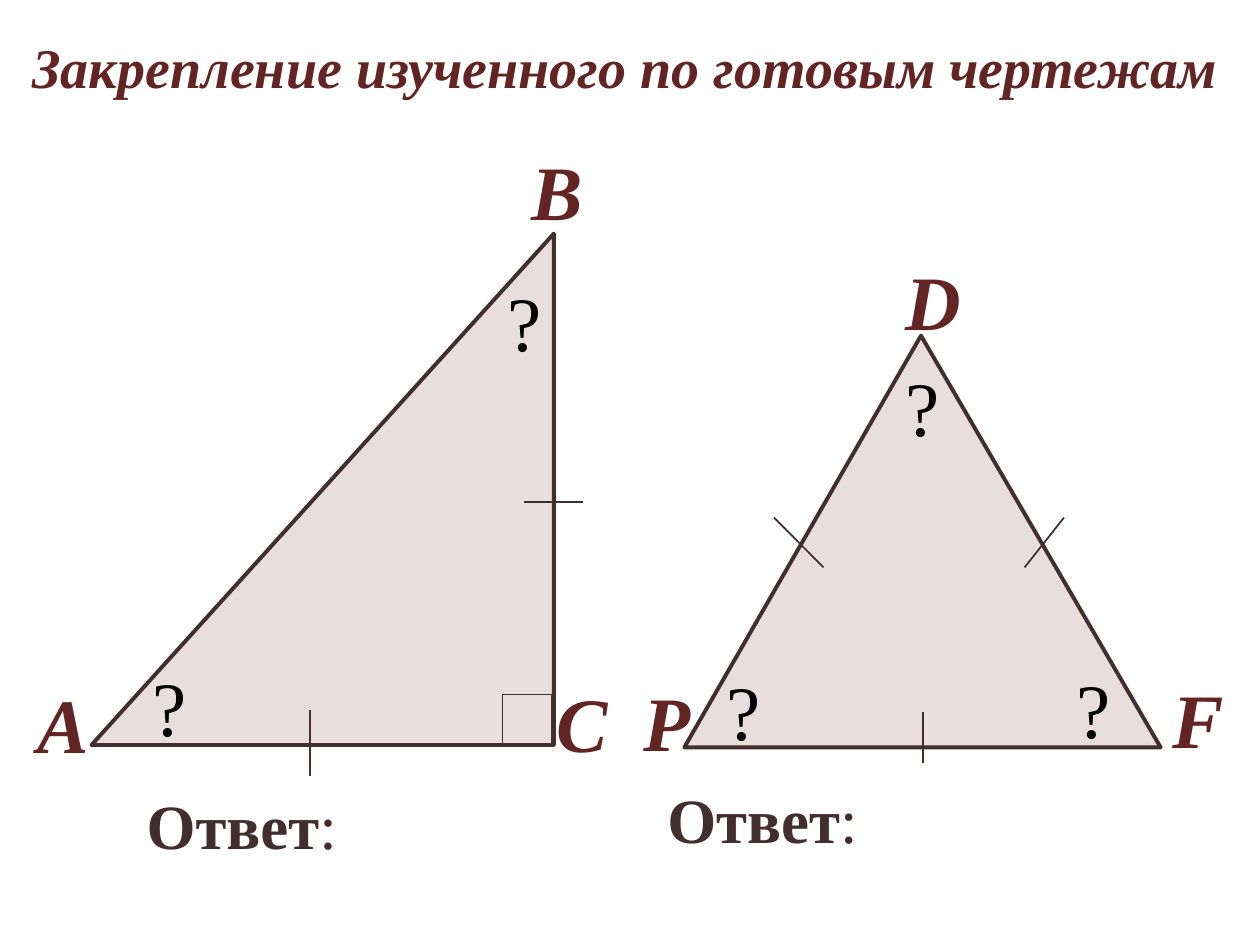
import pptx
import pptx.util
import pptx.dml.color
import pptx.enum.shapes
import pptx.enum.text
import pptx.oxml
import pptx.oxml.ns

Pt = pptx.util.Pt
KIND = pptx.enum.shapes.MSO_SHAPE
ALIGN = pptx.enum.text.PP_ALIGN

THEME = {
    "font": "Times New Roman",
    "wine": "632523", "ink": "422E2E", "rose": "E8DEDE", "black": "000000",
    "glow": "B9DCEB",
    "title": 32, "mark": 44, "answer": 36,
}

TITLE = ("Закрепление изученного по готовым чертежам", (11.5, 15.1, 711.4, 46.1))

# Triangles and the right-angle mark: kind, box, turn, adjustment, line width
SHAPES = [
    (KIND.RIGHT_TRIANGLE, (38.3, 147.5, 292.2, 264.2), 270, None, 2.25),
    (KIND.RECTANGLE, (287.1, 396.9, 28.1, 28.1), 0, None, 0.5),
    (KIND.ISOSCELES_TRIANGLE, (391, 191.8, 272.2, 235.3), 0, 0.497, 2.25),
]

# Strokes across equal sides: x1, y1, x2, y2
TICKS = [
    (333.2, 287, 299.2, 287),
    (177.2, 406, 177.2, 443.5),
    (442.3, 295.8, 470.6, 324.2),
    (608, 295.8, 585.5, 324.2),
    (527.5, 406.9, 527.5, 436),
]

MARK_SIZE = (56.2, 60.5)
LETTERS = [
    ("А", 14.4, 383), ("В", 296.6, 78.5), ("С", 311, 382.3),
    ("Р", 360.9, 382.2), ("D", 510.5, 141.2), ("F", 663.1, 380.4),
]
# Unknown angles: left, top, alignment
ANGLES = [
    (79.9, 373.3, ALIGN.LEFT), (282.8, 153.4, ALIGN.LEFT),
    (596.9, 374.7, ALIGN.CENTER), (498.9, 201.9, ALIGN.CENTER),
    (396.9, 375.5, ALIGN.CENTER),
]

ANSWER = [("Ответ", True), (":", False)]
ANSWER_SIZE = (309.6, 51.1)
ANSWER_SPOTS = [(-16.6, 445.6), (280.9, 442.4)]


def color(name):
    return pptx.dml.color.RGBColor.from_string(THEME[name])


def points(values):
    return [Pt(v) for v in values]


def add_text(slide, box, runs, size, tint, italic=False, align=ALIGN.LEFT):
    """Add a text box; runs are (text, bold) pairs."""
    frame = slide.shapes.add_textbox(*points(box)).text_frame
    frame.word_wrap = True
    frame.auto_size = pptx.enum.text.MSO_AUTO_SIZE.SHAPE_TO_FIT_TEXT
    para = frame.paragraphs[0]
    para.alignment = align
    for text, bold in runs:
        run = para.add_run()
        run.text = text
        font = run.font
        font.name, font.size = THEME["font"], Pt(THEME[size])
        font.bold, font.italic = bold, italic
        font.color.rgb = color(tint)
    return para


def add_glow(run):
    """Give the run a soft pale shadow."""
    props = run.font._element
    effect = pptx.oxml.parse_xml(
        f'<a:effectLst {pptx.oxml.ns.nsdecls("a")}>'
        '<a:outerShdw blurRad="38100" dist="38100" dir="2700000" algn="tl">'
        f'<a:srgbClr val="{THEME["glow"]}"/></a:outerShdw></a:effectLst>')
    props.find(pptx.oxml.ns.qn("a:solidFill")).addnext(effect)


def add_shape(slide, kind, box, turn, adjust, width):
    shape = slide.shapes.add_shape(kind, *points(box))
    shape.shadow.inherit = False
    shape.rotation = turn
    if adjust is not None:
        shape.adjustments[0] = adjust
    shape.fill.solid()
    shape.fill.fore_color.rgb = color("rose")
    shape.line.color.rgb = color("ink")
    shape.line.width = Pt(width)


def add_tick(slide, ends):
    tick = slide.shapes.add_connector(
        pptx.enum.shapes.MSO_CONNECTOR.STRAIGHT, *points(ends))
    tick.line.color.rgb = color("ink")
    tick.line.width = Pt(1)
    tick._element.spPr.append(pptx.oxml.parse_xml(
        f'<a:effectLst {pptx.oxml.ns.nsdecls("a")}/>'))


def main():
    deck = pptx.Presentation()
    deck.slide_width, deck.slide_height = Pt(720), Pt(540)
    slide = deck.slides.add_slide(deck.slide_layouts[6])

    text, box = TITLE
    title = add_text(slide, box, [(text, True)], "title", "wine", italic=True)
    add_glow(title.runs[0])

    for shape in SHAPES:
        add_shape(slide, *shape)
    for ends in TICKS:
        add_tick(slide, ends)
    for text, left, top in LETTERS:
        add_text(slide, (left, top, *MARK_SIZE), [(text, True)],
                 "mark", "wine", italic=True)
    for left, top, align in ANGLES:
        add_text(slide, (left, top, *MARK_SIZE), [("?", False)],
                 "mark", "black", align=align)
    for spot in ANSWER_SPOTS:
        add_text(slide, (*spot, *ANSWER_SIZE), ANSWER,
                 "answer", "ink", align=ALIGN.CENTER)

    deck.save("out.pptx")


if __name__ == "__main__":
    main()
